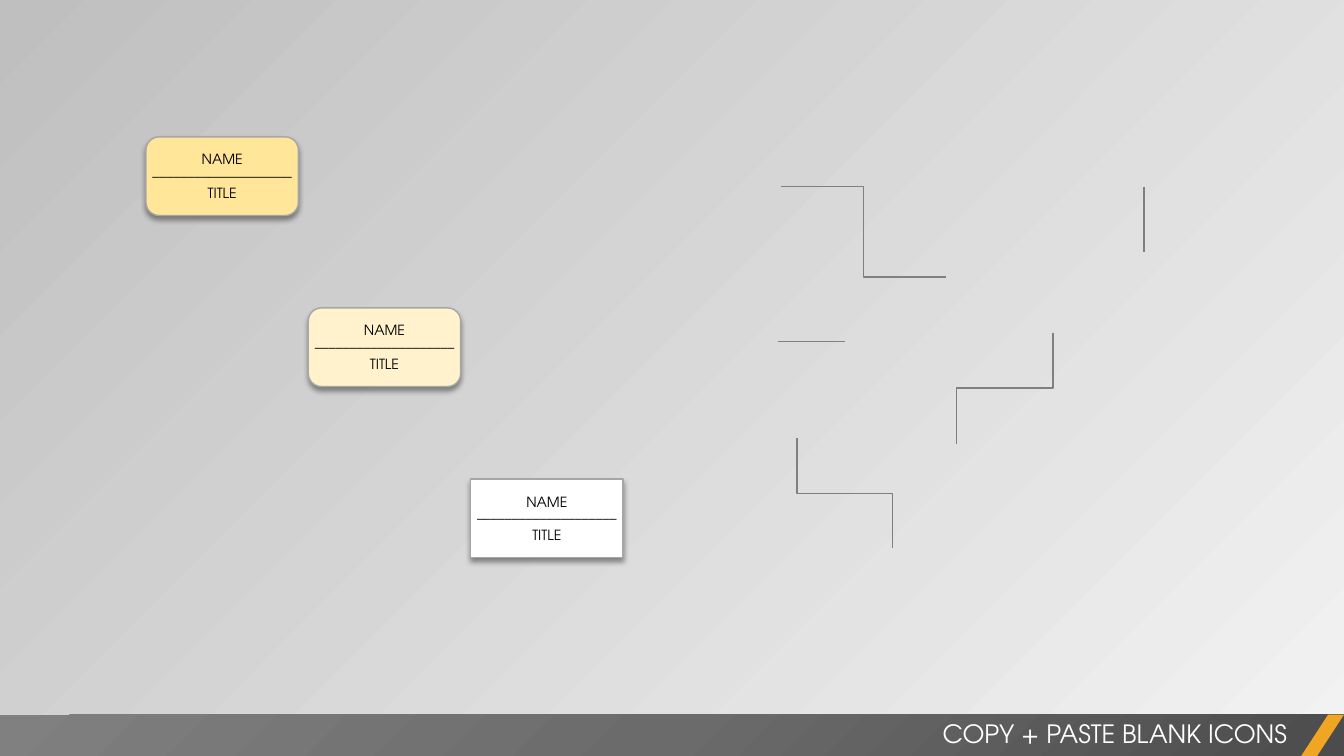
from lxml import etree
from pptx import Presentation
from pptx.dml.color import RGBColor
from pptx.enum.shapes import MSO_CONNECTOR, MSO_SHAPE
from pptx.enum.text import MSO_ANCHOR, MSO_AUTO_SIZE, PP_ALIGN
from pptx.oxml import parse_xml
from pptx.oxml.ns import nsdecls, qn
from pptx.util import Cm, Pt

# Content; all lengths in cm
FONT = "TeX Gyre Adventor"
COLORS = {
    "bg_light": "F2F2F2", "bg_dark": "BFBFBF",
    "bar_dark": "4C4C4C", "bar_mid": "6B6B6B", "bar_light": "808080",
    "accent": "F0A622", "white": "FFFFFF", "black": "000000",
    "connector": "808080", "outline": "A6A6A6",
    "gold": "FFE699", "cream": "FFF2CC",
}
TITLE = "COPY + PASTE BLANK ICONS"
CARD_LINES = ["NAME", "––––––––––––––––––––", "TITLE"]
CARDS = [
    (MSO_SHAPE.FLOWCHART_ALTERNATE_PROCESS, "gold"),
    (MSO_SHAPE.FLOWCHART_ALTERNATE_PROCESS, "cream"),
    (MSO_SHAPE.RECTANGLE, "white"),
]
CONNECTORS = [  # kind, start, end
    ("across", (19.69, 4.70), (23.83, 6.98)),
    ("straight", (19.61, 8.61), (21.29, 8.61)),
    ("straight", (28.83, 4.70), (28.83, 6.35)),
    ("down", (26.54, 8.38), (24.10, 11.18)),
    ("down", (20.09, 11.05), (22.50, 13.82)),
]
SLIDE_W, SLIDE_H = 33.87, 19.05
BAR_TOP, BAR_H, ACCENT_W = 18.01, 1.06, 1.09
CARD_X, CARD_Y, CARD_W, CARD_H = 3.68, 3.45, 3.84, 1.98
STEP_X, STEP_Y = 4.09, 4.31


def rgb(name):
    return RGBColor.from_string(COLORS[name])


def set_gradient(fill, owner, stops, direction):
    fill.gradient()
    grad = owner.find(".//" + qn("a:gradFill"))
    gs = "".join(f'<a:gs pos="{pos * 1000}"><a:srgbClr val="{COLORS[c]}"/></a:gs>'
                 for pos, c in stops)
    grad.getparent().replace(grad, parse_xml(
        f'<a:gradFill {nsdecls("a")} rotWithShape="1"><a:gsLst>{gs}</a:gsLst>'
        f'{direction}</a:gradFill>'))


def add_run(p, text, size, color):
    r = p.add_run()
    r.text = text
    r.font.name, r.font.size = FONT, Pt(size)
    r.font.color.rgb = rgb(color)


def add_box(s, kind, x, y, w, h):
    sp = s.shapes.add_shape(kind, Cm(x), Cm(y), Cm(w), Cm(h))
    sp.shadow.inherit = False
    sp.line.fill.background()
    return sp


def add_connector(s, kind, start, end):
    (x1, y1), (x2, y2) = start, end
    turn = None
    if kind == "down":  # a vertical start is an elbow turned by a quarter
        cx, cy, w, h = (x1 + x2) / 2, (y1 + y2) / 2, y2 - y1, abs(x2 - x1)
        turn = 90 if x2 < x1 else 270
        left, right = cx - w / 2, cx + w / 2
        x1, x2 = (left, right) if turn == 90 else (right, left)
        y1, y2 = cy - h / 2, cy + h / 2
    style = MSO_CONNECTOR.STRAIGHT if kind == "straight" else MSO_CONNECTOR.ELBOW
    cn = s.shapes.add_connector(style, Cm(x1), Cm(y1), Cm(x2), Cm(y2))
    cn.line.color.rgb, cn.line.width = rgb("connector"), Pt(1)
    pr = cn._element.spPr
    etree.SubElement(pr, qn("a:effectLst"))
    if turn:
        pr.find(qn("a:xfrm")).set("rot", str(turn * 60000))


def add_card(s, kind, color, x, y):
    sp = add_box(s, kind, x, y, CARD_W, CARD_H)
    sp.fill.solid()
    sp.fill.fore_color.rgb = rgb(color)
    sp.line.color.rgb, sp.line.width = rgb("outline"), Pt(1)
    sp._element.spPr.find(qn("a:effectLst")).append(parse_xml(
        f'<a:outerShdw {nsdecls("a")} blurRad="{Pt(4)}" dist="{Pt(3)}" dir="5400000" '
        f'algn="t" rotWithShape="0"><a:srgbClr val="{COLORS["black"]}">'
        '<a:alpha val="40000"/></a:srgbClr></a:outerShdw>'))
    tf = sp.text_frame
    tf.word_wrap, tf.vertical_anchor = True, MSO_ANCHOR.MIDDLE
    tf.margin_left = tf.margin_right = tf.margin_top = tf.margin_bottom = Cm(0.05)
    for i, line in enumerate(CARD_LINES):
        p = tf.add_paragraph() if i else tf.paragraphs[0]
        p.alignment = PP_ALIGN.CENTER
        add_run(p, line, 10, "black")


def main():
    prs = Presentation()
    prs.slide_width, prs.slide_height = Cm(SLIDE_W), Cm(SLIDE_H)
    s = prs.slides.add_slide(prs.slide_layouts[5])

    # Background and title bar
    set_gradient(s.background.fill, s._element, [(0, "bg_light"), (100, "bg_dark")],
                 '<a:lin ang="13500000" scaled="0"/>')
    bar = add_box(s, MSO_SHAPE.RECTANGLE, 0, BAR_TOP, SLIDE_W, BAR_H)
    set_gradient(bar.fill, bar._element,
                 [(0, "bar_dark"), (50, "bar_mid"), (100, "bar_light")],
                 '<a:path path="circle"><a:fillToRect l="100000" t="100000"/></a:path>')
    accent = add_box(s, MSO_SHAPE.PARALLELOGRAM, SLIDE_W - ACCENT_W, BAR_TOP,
                     ACCENT_W, BAR_H)
    accent.adjustments[0] = 0.65
    accent.fill.solid()
    accent.fill.fore_color.rgb = rgb("accent")

    # Title, stacked above the bar
    title = s.shapes.title
    title.left, title.top, title.width, title.height = (
        Cm(13.34), Cm(17.98), Cm(19.35), Cm(1.02))
    accent._element.addnext(title._element)
    tf = title.text_frame
    tf.word_wrap, tf.vertical_anchor = True, MSO_ANCHOR.TOP
    tf.auto_size = MSO_AUTO_SIZE.SHAPE_TO_FIT_TEXT
    p = tf.paragraphs[0]
    p.alignment = PP_ALIGN.RIGHT
    add_run(p, TITLE, 18, "white")

    # Spare connectors
    for kind, start, end in CONNECTORS:
        add_connector(s, kind, start, end)

    # Blank cards, stepping down to the right
    for i, (kind, color) in enumerate(CARDS):
        add_card(s, kind, color, CARD_X + i * STEP_X, CARD_Y + i * STEP_Y)

    prs.save("out.pptx")


if __name__ == "__main__":
    main()
